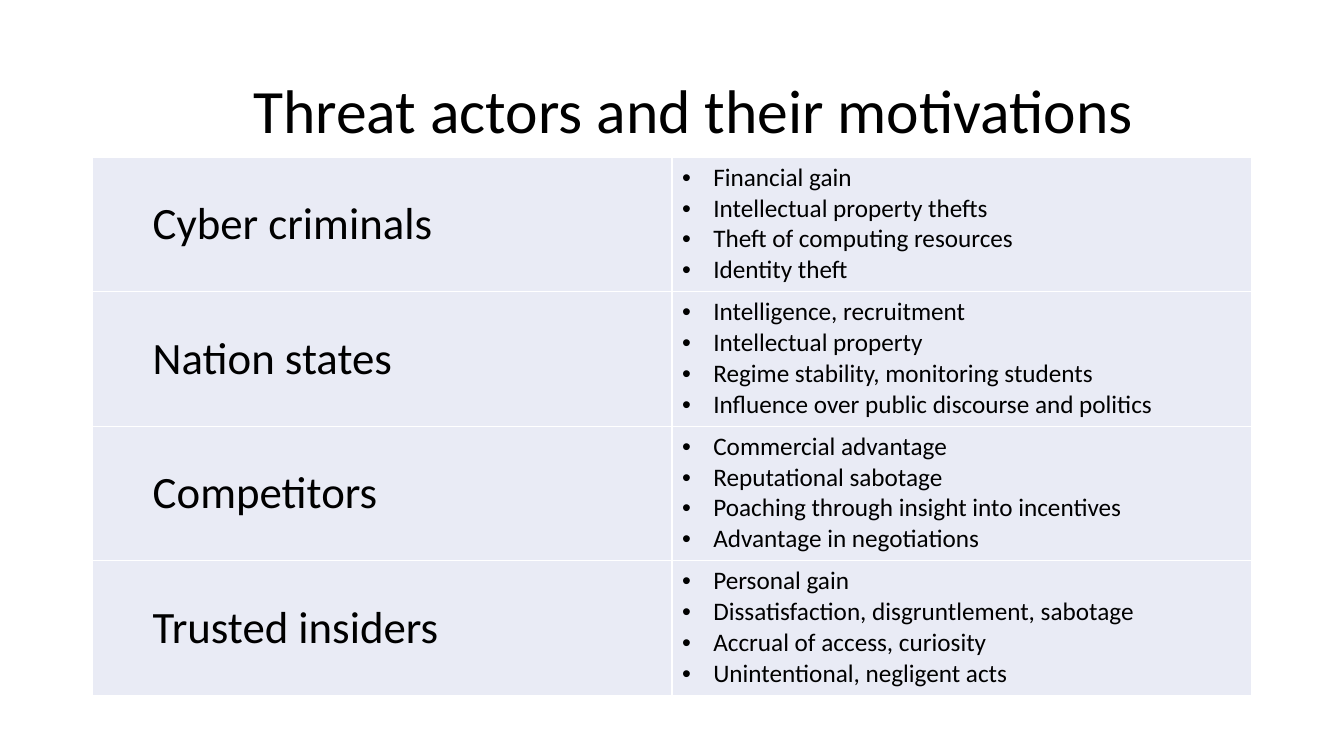
import pptx
import pptx.util
import pptx.dml.color
import pptx.enum.text
import pptx.oxml.ns
import lxml.etree

# Content
TITLE = "Threat actors and their motivations"
ACTORS = {
    "Cyber criminals": [
        "Financial gain",
        "Intellectual property thefts",
        "Theft of computing resources",
        "Identity theft",
    ],
    "Nation states": [
        "Intelligence, recruitment",
        "Intellectual property",
        "Regime stability, monitoring students",
        "Influence over public discourse and politics",
    ],
    "Competitors": [
        "Commercial advantage",
        "Reputational sabotage",
        "Poaching through insight into incentives",
        "Advantage in negotiations",
    ],
    "Trusted insiders": [
        "Personal gain",
        "Dissatisfaction, disgruntlement, sabotage",
        "Accrual of access, curiosity",
        "Unintentional, negligent acts",
    ],
}

# Style
FONT = "Calibri"
BLACK = pptx.dml.color.RGBColor(0x00, 0x00, 0x00)
WHITE = pptx.dml.color.RGBColor(0xFF, 0xFF, 0xFF)
PALE = pptx.dml.color.RGBColor(0xE9, 0xEB, 0xF5)
MIDDLE = pptx.enum.text.MSO_ANCHOR.MIDDLE
LEFT = pptx.enum.text.PP_ALIGN.LEFT

# Grid
inch = pptx.util.Inches
WIDE, HIGH = inch(13.33), inch(7.5)
COL, ROW = inch(5.75), inch(5.34 / len(ACTORS))
EDGE = (WIDE - 2 * COL) // 2
TOP = inch(1.56)


def add_tag(parent, name, **attrs):
    return lxml.etree.SubElement(parent, pptx.oxml.ns.qn(name), attrs)


def add_text(para, text, size):
    para.alignment = LEFT
    run = para.add_run()
    run.text = text
    run.font.name = FONT
    run.font.size = pptx.util.Pt(size)
    run.font.color.rgb = BLACK


def indent(para, left, first):
    props = para._p.get_or_add_pPr()
    props.set("marL", str(inch(left)))
    props.set("indent", str(inch(first)))
    return props


def style_cell(cell):
    props = cell._tc.get_or_add_tcPr()
    for side in "LRTB":
        line = add_tag(props, "a:ln" + side, w=str(pptx.util.Pt(1)))
        paint = add_tag(line, "a:solidFill")
        add_tag(paint, "a:srgbClr", val=str(WHITE))
    cell.fill.solid()
    cell.fill.fore_color.rgb = PALE


deck = pptx.Presentation()
deck.slide_width, deck.slide_height = WIDE, HIGH
slide = deck.slides.add_slide(deck.slide_layouts[5])

# Title
title = slide.shapes.title
title.left, title.top = inch(2.41), inch(0.4)
title.width, title.height = inch(10.01), inch(1.45)
title.text_frame.vertical_anchor = MIDDLE
head = title.text_frame.paragraphs[0]
head.line_spacing = 0.9
add_text(head, TITLE, 44)

# Table of actors
table = slide.shapes.add_table(
    len(ACTORS), 2, EDGE, TOP, 2 * COL, ROW * len(ACTORS)).table
table.first_row = table.horz_banding = False
for col in table.columns:
    col.width = COL

for row, (actor, motives) in enumerate(ACTORS.items()):
    table.rows[row].height = ROW
    name, list_cell = table.cell(row, 0), table.cell(row, 1)
    style_cell(name)
    style_cell(list_cell)

    # Actor name
    name.vertical_anchor = MIDDLE
    para = name.text_frame.paragraphs[0]
    para.level = 1
    indent(para, 0.5, 0)
    add_text(para, actor, 32)

    # Bulleted motives
    frame = list_cell.text_frame
    for i, motive in enumerate(motives):
        para = frame.add_paragraph() if i else frame.paragraphs[0]
        props = indent(para, 0.31, -0.31)
        add_tag(props, "a:buFont", typeface="Arial")
        add_tag(props, "a:buChar", char="•")
        add_text(para, motive, 18)

deck.save("out.pptx")
